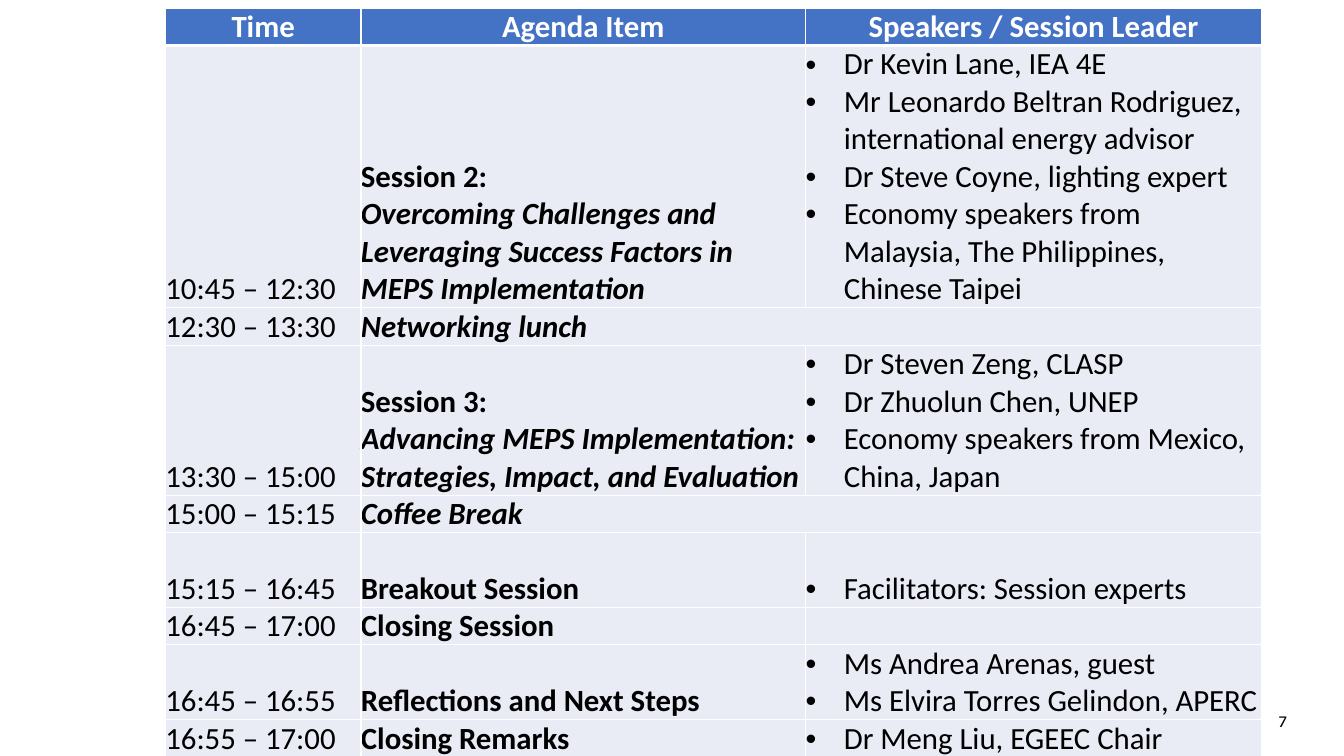
from lxml import etree
from pptx import Presentation
from pptx.dml.color import RGBColor
from pptx.enum.text import MSO_ANCHOR, PP_ALIGN
from pptx.oxml.ns import qn
from pptx.util import Inches, Pt

CENTER, RIGHT = PP_ALIGN.CENTER, PP_ALIGN.RIGHT
MIDDLE, BOTTOM, TOP = MSO_ANCHOR.MIDDLE, MSO_ANCHOR.BOTTOM, MSO_ANCHOR.TOP
WHITE = RGBColor(0xFF, 0xFF, 0xFF)
BLACK = RGBColor(0, 0, 0)
HEADER_BLUE = RGBColor(0x44, 0x72, 0xC4)
PALE_BLUE = RGBColor(0xE9, 0xEB, 0xF5)

# Content: time, bold title, bold italic subject, speakers, height in text lines
HEADINGS = ["Time", "Agenda Item", "Speakers / Session Leader"]
AGENDA = [
    ("10:45 – 12:30", "Session 2:",
     "Overcoming Challenges and Leveraging Success Factors in MEPS Implementation",
     ["Dr Kevin Lane, IEA 4E",
      "Mr Leonardo Beltran Rodriguez, international energy advisor",
      "Dr Steve Coyne, lighting expert",
      "Economy speakers from Malaysia, The Philippines, Chinese Taipei"], 7),
    ("12:30 – 13:30", "", "Networking lunch", [], 1),
    ("13:30 – 15:00", "Session 3:",
     "Advancing MEPS Implementation: Strategies, Impact, and Evaluation",
     ["Dr Steven Zeng, CLASP", "Dr Zhuolun Chen, UNEP",
      "Economy speakers from Mexico, China, Japan"], 4),
    ("15:00 – 15:15", "", "Coffee Break", [], 1),
    ("15:15 – 16:45", "Breakout Session", "", ["Facilitators: Session experts"], 2),
    ("16:45 – 17:00", "Closing Session", "", [], 1),
    ("16:45 – 16:55", "Reflections and Next Steps", "",
     ["Ms Andrea Arenas, guest", "Ms Elvira Torres Gelindon, APERC"], 2),
    ("16:55 – 17:00", "Closing Remarks", "", ["Dr Meng Liu, EGEEC Chair"], 1),
]
PAGE_NUMBER = "7"
COLUMN_WIDTHS = [1.94, 4.41, 4.52]
LINE_HEIGHT = 0.37
BULLET_INDENT = Inches(0.38)


def add_bullet(para):
    props = para._p.get_or_add_pPr()
    props.set("marL", str(BULLET_INDENT))
    props.set("indent", str(-BULLET_INDENT))
    etree.SubElement(props, qn("a:buFont")).set("typeface", "Arial")
    etree.SubElement(props, qn("a:buChar")).set("char", "•")


def add_borders(cell, bottom_width):
    props = cell._tc.get_or_add_tcPr()
    for side, width in (("L", 1), ("R", 1), ("T", 1), ("B", bottom_width)):
        line = etree.SubElement(props, qn("a:ln" + side), w=str(Pt(width)))
        fill = etree.SubElement(line, qn("a:solidFill"))
        etree.SubElement(fill, qn("a:srgbClr")).set("val", str(WHITE))


def style_font(font, name, size, color, bold=False, italic=False):
    font.name, font.size, font.bold, font.italic = name, Pt(size), bold, italic
    font.color.rgb = color


def fill_cell(cell, lines, header=False):
    """Each line is (text, bold, italic, bulleted)."""
    cell.margin_left = cell.margin_right = cell.margin_top = cell.margin_bottom = 0
    cell.vertical_anchor = TOP if header else BOTTOM
    add_borders(cell, 3 if header else 1)
    cell.fill.solid()
    cell.fill.fore_color.rgb = HEADER_BLUE if header else PALE_BLUE
    for index, (text, bold, italic, bulleted) in enumerate(lines):
        frame = cell.text_frame
        para = frame.add_paragraph() if index else frame.paragraphs[0]
        if bulleted:
            add_bullet(para)
        if header:
            para.alignment = CENTER
        para.add_run().text = text
        style_font(para.font, "Calibri", 22, WHITE if header else BLACK, bold, italic)


def main():
    deck = Presentation()
    deck.slide_width, deck.slide_height = Inches(13.33), Inches(7.5)
    page = deck.slides.add_slide(deck.slide_layouts[6])

    # Agenda table
    line_counts = [1] + [entry[-1] for entry in AGENDA]
    table = page.shapes.add_table(
        len(line_counts), len(COLUMN_WIDTHS), Inches(1.64), Inches(0.08),
        Inches(sum(COLUMN_WIDTHS)), Inches(LINE_HEIGHT * sum(line_counts))).table
    table.horz_banding = False
    for column, width in zip(table.columns, COLUMN_WIDTHS):
        column.width = Inches(width)
    for row, count in zip(table.rows, line_counts):
        row.height = Inches(LINE_HEIGHT * count)

    for column, heading in enumerate(HEADINGS):
        fill_cell(table.cell(0, column), [(heading, True, False, False)], header=True)
    for row, (time, title, subject, speakers, _) in enumerate(AGENDA, 1):
        item = [(title, True, False, False), (subject, True, True, False)]
        cells = (
            [(time, False, False, False)],
            [line for line in item if line[0]],
            [(speaker, False, False, True) for speaker in speakers] or [("", False, False, False)],
        )
        for column, lines in enumerate(cells):
            fill_cell(table.cell(row, column), lines)
        if not title:  # breaks run across the speaker column
            table.cell(row, 1).merge(table.cell(row, 2))

    # Page number
    box = page.shapes.add_textbox(Inches(9.86), Inches(6.95), Inches(3), Inches(0.4))
    box.text_frame.word_wrap = True
    box.text_frame.vertical_anchor = MIDDLE
    para = box.text_frame.paragraphs[0]
    para.alignment = RIGHT
    para.add_run().text = PAGE_NUMBER
    style_font(para.font, "Karla", 12, BLACK)

    deck.save("out.pptx")


if __name__ == "__main__":
    main()
